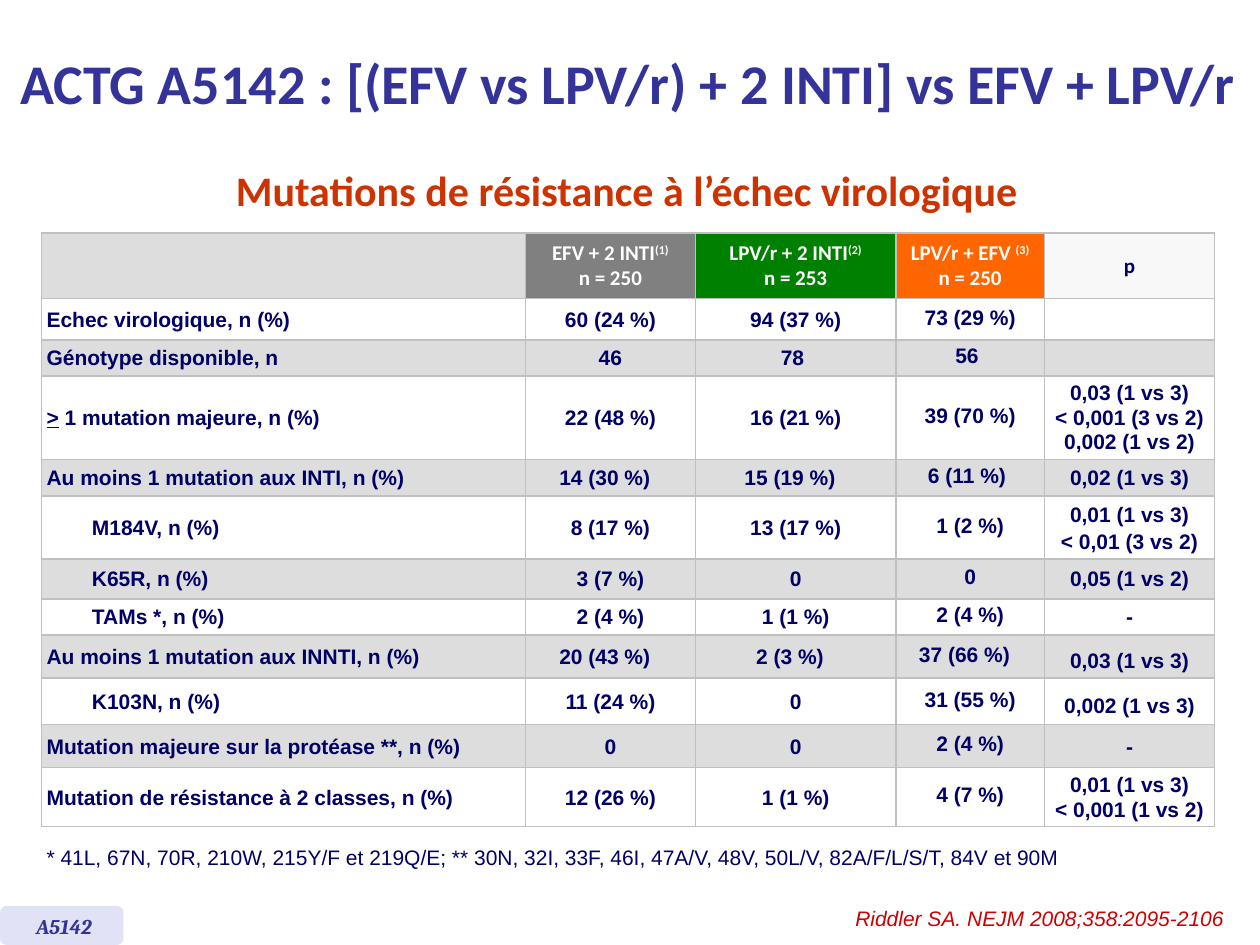
from lxml.etree import SubElement
from pptx import Presentation
from pptx.dml.color import RGBColor
from pptx.enum.shapes import MSO_SHAPE
from pptx.enum.text import MSO_ANCHOR, MSO_AUTO_SIZE, PP_ALIGN
from pptx.oxml import parse_xml
from pptx.oxml.ns import nsdecls, qn
from pptx.util import Inches, Pt

INDIGO = RGBColor(0x33, 0x33, 0x99)
NAVY = RGBColor(0x00, 0x00, 0x66)
RUST = RGBColor(0xCC, 0x33, 0x00)
RED = RGBColor(0xCC, 0x00, 0x00)
LAVENDER = RGBColor(0xE2, 0xE2, 0xF6)
WHITE = RGBColor(0xFF, 0xFF, 0xFF)
PALE = RGBColor(0xF8, 0xF8, 0xF8)
LIGHT_GRAY = RGBColor(0xDD, 0xDD, 0xDD)
GRAY = RGBColor(0x80, 0x80, 0x80)
GREEN = RGBColor(0x00, 0x80, 0x00)
ORANGE = RGBColor(0xFF, 0x66, 0x00)
BORDER = RGBColor(0xC0, 0xC0, 0xC0)


def write(paragraph, text, font="Arial", size=12, color=NAVY, bold=False, italic=False,
          underline=False, baseline=0, align=PP_ALIGN.LEFT, spacing=None):
    paragraph.alignment = align
    paragraph.line_spacing = spacing
    if not text:
        SubElement(paragraph._p, qn("a:endParaRPr")).set("sz", str(size * 100))
        return
    run = paragraph.add_run()
    run.text = text
    run.font.name = font
    run.font.size = Pt(size)
    run.font.color.rgb = color
    run.font.bold = bold
    run.font.italic = italic
    run.font.underline = underline
    if baseline:
        run.font._element.set("baseline", str(baseline * 1000))


def set_borders(cell, hidden):
    properties = cell._tc.get_or_add_tcPr()
    for position, side in enumerate("LRTB"):
        paint = "<a:noFill/>" if side == hidden else (
            f'<a:solidFill><a:srgbClr val="{BORDER}"/></a:solidFill>')
        properties.insert(position, parse_xml(
            f'<a:ln{side} {nsdecls("a")} w="12700">{paint}</a:ln{side}>'))


presentation = Presentation()
presentation.slide_width = Inches(10)
presentation.slide_height = Inches(7.5)
slide = presentation.slides.add_slide(presentation.slide_layouts[5])

title = slide.shapes.title
title.left, title.top, title.width, title.height = (
    Inches(0.06), Inches(0.05), Inches(9.94), Inches(1.21))
title.text_frame.vertical_anchor = MSO_ANCHOR.MIDDLE
title.text_frame.auto_size = MSO_AUTO_SIZE.NONE
write(title.text_frame.paragraphs[0], "ACTG A5142 : [(EFV vs LPV/r) + 2 INTI] vs EFV + LPV/r",
      font="Calibri", size=32, color=INDIGO, bold=True)

COLUMN_WIDTHS = [0.36, 3.48, 1.35, 1.59, 1.18, 1.35]
ROW_HEIGHTS = [0.52, 0.33, 0.27, 0.66, 0.29, 0.5, 0.32, 0.28, 0.34, 0.37, 0.34, 0.47]
ARMS = [
    ("EFV + 2 INTI", "(1)", "n = 250", GRAY),
    ("LPV/r + 2 INTI", "(2)", "n = 253", GREEN),
    ("LPV/r + EFV ", "(3)", "n = 250", ORANGE),
]
RESULTS = [
    ("Echec virologique, n (%)", "60 (24 %)", "94 (37 %)", "73 (29 %)", ""),
    ("Génotype disponible, n", "46", "78", "56", ""),
    ("> 1 mutation majeure, n (%)", "22 (48 %)", "16 (21 %)", "39 (70 %)",
     "0,03 (1 vs 3)\n< 0,001 (3 vs 2)\n0,002 (1 vs 2)"),
    ("Au moins 1 mutation aux INTI, n (%)", "14 (30 %)", "15 (19 %)", "6 (11 %)",
     "0,02 (1 vs 3)"),
    ("M184V, n (%)", "8 (17 %)", "13 (17 %)", "1 (2 %)", "0,01 (1 vs 3)\n< 0,01 (3 vs 2)"),
    ("K65R, n (%)", "3 (7 %)", "0", "0", "0,05 (1 vs 2)"),
    ("TAMs *, n (%)", "2 (4 %)", "1 (1 %)", "2 (4 %)", "-"),
    ("Au moins 1 mutation aux INNTI, n (%)", "20 (43 %)", "2 (3 %)", "37 (66 %)",
     "0,03 (1 vs 3)"),
    ("K103N, n (%)", "11 (24 %)", "0", "31 (55 %)", "0,002 (1 vs 3)"),
    ("Mutation majeure sur la protéase **, n (%)", "0", "0", "2 (4 %)", "-"),
    ("Mutation de résistance à 2 classes, n (%)", "12 (26 %)", "1 (1 %)", "4 (7 %)",
     "0,01 (1 vs 3)\n< 0,001 (1 vs 2)"),
]
INDENTED_ROWS = {5, 6, 7, 9}
P_SPACING = {5: Pt(15), 8: Pt(19), 9: Pt(19)}
EXTRA_RIGHT = {(2, 3): 0.05, (2, 4): 0.05, (4, 2): 0.09, (4, 3): 0.09, (4, 4): 0.05,
               (8, 2): 0.09, (8, 3): 0.09, (8, 4): 0.09}

mutations = slide.shapes.add_table(
    len(ROW_HEIGHTS), len(COLUMN_WIDTHS), Inches(0.33), Inches(1.85),
    Inches(sum(COLUMN_WIDTHS)), Inches(sum(ROW_HEIGHTS))).table
mutations.first_row = False
mutations.horz_banding = False
for column, width in zip(mutations.columns, COLUMN_WIDTHS):
    column.width = Inches(width)

for row, height in enumerate(ROW_HEIGHTS):
    mutations.rows[row].height = Inches(height)
    for col in range(len(COLUMN_WIDTHS)):
        cell = mutations.cell(row, col)
        cell.fill.solid()
        cell.fill.fore_color.rgb = WHITE if row % 2 else LIGHT_GRAY
        cell.vertical_anchor = MSO_ANCHOR.MIDDLE
        cell.margin_left = cell.margin_top = cell.margin_bottom = Inches(0.04)
        cell.margin_right = Inches(0.04 + EXTRA_RIGHT.get((row, col), 0))
        set_borders(cell, {0: "R", 1: "L"}.get(col) if row in INDENTED_ROWS else None)
    if row not in INDENTED_ROWS:
        mutations.cell(row, 0).merge(mutations.cell(row, 1))

for col in (0, 1):
    write(mutations.cell(0, col).text_frame.paragraphs[0], "")
for col, (arm, reference, count, color) in enumerate(ARMS, start=2):
    cell = mutations.cell(0, col)
    cell.fill.fore_color.rgb = color
    heading = cell.text_frame.paragraphs[0]
    heading_format = dict(font="Calibri", color=WHITE, bold=True,
                          align=PP_ALIGN.CENTER, spacing=0.95)
    write(heading, arm, **heading_format)
    write(heading, reference, baseline=30, **heading_format)
    heading.add_line_break()
    write(heading, count, **heading_format)
p_heading = mutations.cell(0, 5)
p_heading.fill.fore_color.rgb = PALE
write(p_heading.text_frame.paragraphs[0], "p", font="Calibri", bold=True,
      align=PP_ALIGN.CENTER, spacing=0.95)

for row, (label, *values, p_values) in enumerate(RESULTS, start=1):
    label_col = 1 if row in INDENTED_ROWS else 0
    write(mutations.cell(row, 1 - label_col).text_frame.paragraphs[0], "")
    label_line = mutations.cell(row, label_col).text_frame.paragraphs[0]
    if label.startswith(">"):
        write(label_line, ">", bold=True, underline=True, spacing=Pt(14))
        label = label[1:]
    write(label_line, label, bold=True, spacing=Pt(14))
    for col, value in enumerate(values, start=2):
        write(mutations.cell(row, col).text_frame.paragraphs[0], value, bold=True,
              align=PP_ALIGN.CENTER, spacing=0.8 if col == 4 else Pt(14))
    p_frame = mutations.cell(row, 5).text_frame
    for number, p_value in enumerate(p_values.split("\n")):
        p_line = p_frame.add_paragraph() if number else p_frame.paragraphs[0]
        write(p_line, p_value, bold=True, align=PP_ALIGN.CENTER,
              spacing=P_SPACING.get(row, Pt(14)))

footnote = slide.shapes.add_textbox(
    Inches(0.37), Inches(6.68), Inches(8.13), Inches(0.22)).text_frame
footnote.margin_left = footnote.margin_right = footnote.margin_top = footnote.margin_bottom = 0
write(footnote.paragraphs[0],
      "* 41L, 67N, 70R, 210W, 215Y/F et 219Q/E; ** 30N, 32I, 33F, 46I, 47A/V, 48V, 50L/V, "
      "82A/F/L/S/T, 84V et 90M", spacing=Pt(16))

study = slide.shapes.add_group_shape()
badge = study.shapes.add_shape(
    MSO_SHAPE.ROUNDED_RECTANGLE, 0, Inches(7.19), Inches(0.98), Inches(0.31))
badge.shadow.inherit = False
badge.fill.solid()
badge.fill.fore_color.rgb = LAVENDER
badge.line.fill.background()
study_name = study.shapes.add_textbox(
    Inches(0.19), Inches(7.2), Inches(0.69), Inches(0.3)).text_frame
write(study_name.paragraphs[0], "A5142", font="Cambria", color=INDIGO, bold=True, italic=True)

subtitle = slide.shapes.add_textbox(
    Inches(1.75), Inches(1.3), Inches(6.45), Inches(0.46)).text_frame
write(subtitle.paragraphs[0], "Mutations de résistance à l’échec virologique", font="Calibri",
      size=24, color=RUST, bold=True, align=PP_ALIGN.CENTER, spacing=0.9)

citation = slide.shapes.add_textbox(
    Inches(6.47), Inches(7.14), Inches(3.39), Inches(0.3)).text_frame
citation.word_wrap = True
write(citation.paragraphs[0], "Riddler SA. NEJM 2008;358:2095-2106 ", color=RED, italic=True,
      align=PP_ALIGN.RIGHT)

presentation.save("out.pptx")
